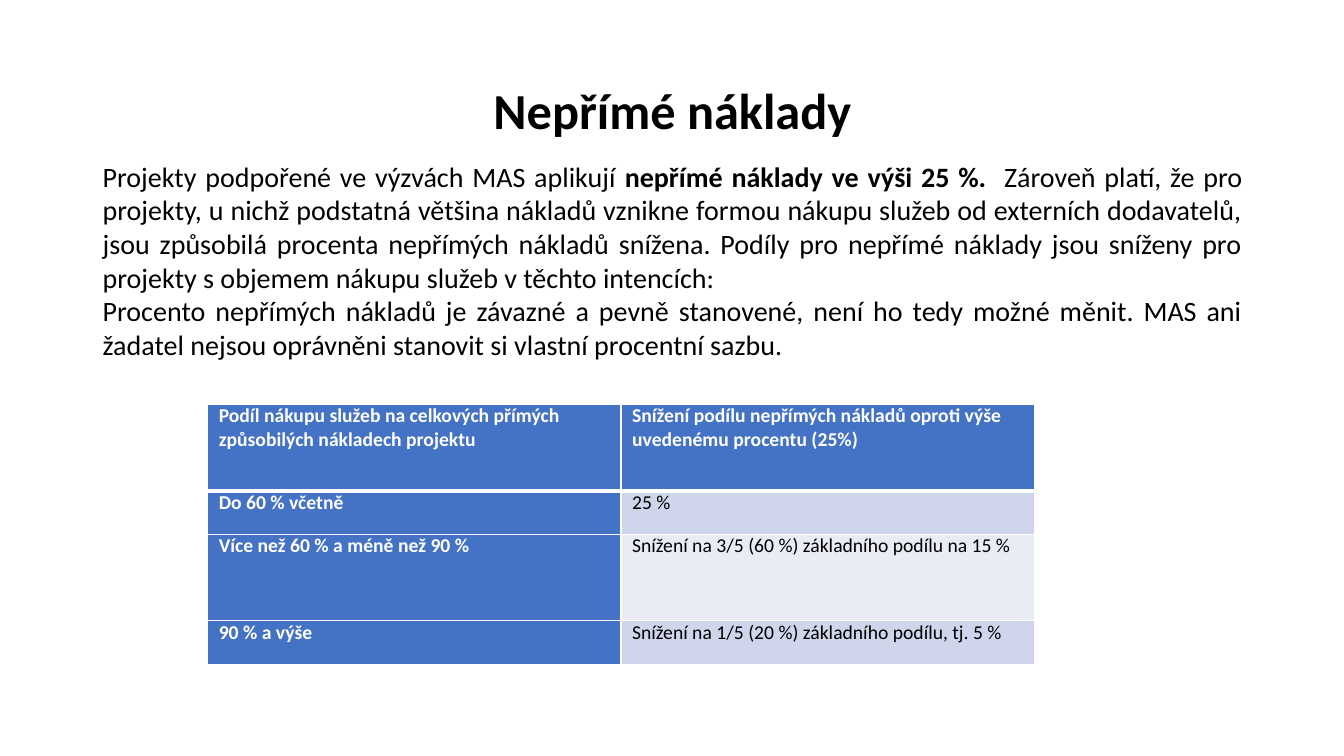
from pptx import Presentation
from pptx.dml.color import RGBColor
from pptx.enum.text import MSO_ANCHOR, MSO_AUTO_SIZE, PP_ALIGN
from pptx.oxml import parse_xml
from pptx.oxml.ns import nsdecls
from pptx.util import Inches, Pt

BLACK, WHITE, BLUE = "000000", "FFFFFF", "4472C4"
BANDS = ("CFD5EA", "E9EBF5")
ROW_HEIGHTS = (0.86, 0.43, 0.86, 0.43)

TITLE = "Nepřímé náklady"
# Each paragraph is a list of (text, bold) spans
EXPLANATION = [
    [
        ("Projekty podpořené ve výzvách MAS aplikují ", False),
        ("nepřímé náklady ve výši 25 %.", True),
        ("  Zároveň platí, že pro projekty, u nichž podstatná většina nákladů "
         "vznikne formou nákupu služeb od externích dodavatelů, jsou způsobilá "
         "procenta nepřímých nákladů snížena. Podíly pro nepřímé náklady jsou "
         "sníženy pro projekty s objemem nákupu služeb v těchto intencích:", False),
    ],
    [
        ("Procento nepřímých nákladů je závazné a pevně stanovené, není ho tedy "
         "možné měnit. MAS ani žadatel nejsou oprávněni stanovit si vlastní "
         "procentní sazbu.", False),
    ],
]
RATES = [
    ("Podíl nákupu služeb na celkových přímých způsobilých nákladech projektu",
     "Snížení podílu nepřímých nákladů oproti výše uvedenému procentu (25%)"),
    ("Do 60 % včetně", "25 %"),
    ("Více než 60 % a méně než 90 %",
     "Snížení na 3/5 (60 %) základního podílu na 15 %"),
    ("90 % a výše", "Snížení na 1/5 (20 %) základního podílu, tj. 5 %"),
]


def color(value):
    return RGBColor.from_string(value)


def set_all(target, values):
    for name, value in values.items():
        setattr(target, name, value)


def add_span(para, text, size, bold, ink=BLACK):
    span = para.add_run()
    span.text = text
    set_all(span.font, {"name": "Calibri", "size": Pt(size), "bold": bold})
    span.font.color.rgb = color(ink)


def place_title(page, left, top, width, height):
    title = page.shapes.title
    set_all(title, {"left": Inches(left), "top": Inches(top),
                    "width": Inches(width), "height": Inches(height)})
    frame = title.text_frame
    # The title sits on the lower line of its box
    set_all(frame, {"word_wrap": True, "auto_size": MSO_AUTO_SIZE.NONE,
                    "vertical_anchor": MSO_ANCHOR.TOP,
                    "margin_top": Inches(0.45), "margin_bottom": 0})
    para = frame.paragraphs[0]
    set_all(para, {"alignment": PP_ALIGN.CENTER, "line_spacing": 0.9})
    add_span(para, TITLE, 36, True)


def place_explanation(page, left, top, width, height):
    box = page.shapes.add_textbox(*map(Inches, (left, top, width, height)))
    frame = box.text_frame
    set_all(frame, {"word_wrap": True, "vertical_anchor": MSO_ANCHOR.MIDDLE,
                    "auto_size": MSO_AUTO_SIZE.SHAPE_TO_FIT_TEXT})
    for index, spans in enumerate(EXPLANATION):
        para = frame.add_paragraph() if index else frame.paragraphs[0]
        para.alignment = PP_ALIGN.JUSTIFY
        for text, bold in spans:
            add_span(para, text, 20, bold)


def set_borders(cell, widths):
    properties = cell._tc.get_or_add_tcPr()
    for index, (side, width) in enumerate(widths.items()):
        properties.insert(index, parse_xml(
            f'<a:ln{side} {nsdecls("a")} w="{Pt(width)}"><a:solidFill>'
            f'<a:srgbClr val="{WHITE}"/></a:solidFill></a:ln{side}>'))


def place_rates(page, left, top, width, height):
    table = page.shapes.add_table(
        len(RATES), 2, *map(Inches, (left, top, width, height))).table
    for column in table.columns:
        column.width = Inches(width / 2)
    for row, texts in enumerate(RATES):
        table.rows[row].height = Inches(ROW_HEIGHTS[row])
        for column, text in enumerate(texts):
            cell = table.cell(row, column)
            strong = row == 0 or column == 0
            set_all(cell, {"margin_left": Inches(0.11), "margin_right": Inches(0.07),
                           "margin_top": 0, "margin_bottom": 0})
            cell.fill.solid()
            cell.fill.fore_color.rgb = color(BLUE if strong else BANDS[(row - 1) % 2])
            # A thicker rule separates the header from the rows
            set_borders(cell, {"L": 1, "R": 1, "T": 3 if row == 1 else 1,
                               "B": 3 if row == 0 else 1})
            para = cell.text_frame.paragraphs[0]
            para.space_after = Pt(3)
            add_span(para, text, 14, strong, WHITE if strong else BLACK)


def main():
    deck = Presentation()
    set_all(deck, {"slide_width": Inches(13.33), "slide_height": Inches(7.5)})
    page = deck.slides.add_slide(deck.slide_layouts.get_by_name("Title Only"))
    place_title(page, 0.92, 0.4, 11.5, 0.89)
    place_rates(page, 2.06, 4.01, 8.2, sum(ROW_HEIGHTS))
    place_explanation(page, 0.92, 1.52, 11.5, 2.12)
    deck.save("out.pptx")


if __name__ == "__main__":
    main()
